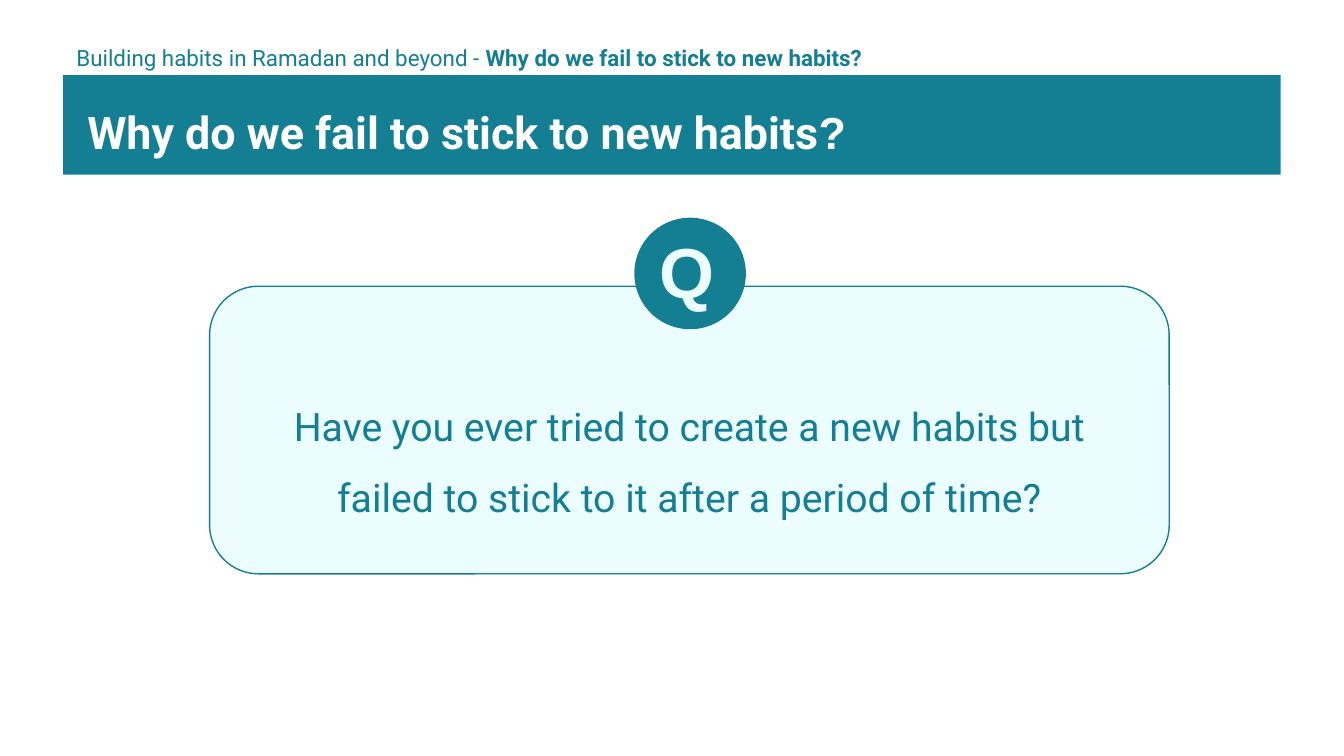
from pptx import Presentation
from pptx.dml.color import RGBColor
from pptx.enum.shapes import MSO_SHAPE
from pptx.enum.text import MSO_ANCHOR, PP_ALIGN
from pptx.util import Inches, Pt

COLORS = {"teal": "147E93", "pale": "EBFDFF", "white": "FFFFFF"}


def add_panel(kind, left, top, width, height, fill):
    shape = slide.shapes.add_shape(
        kind, Inches(left), Inches(top), Inches(width), Inches(height))
    shape.shadow.inherit = False
    shape.fill.solid()
    shape.fill.fore_color.rgb = RGBColor.from_string(COLORS[fill])
    shape.line.fill.background()
    return shape


def add_text(left, top, width, height, runs, size, color, line_spacing):
    """Add a one-paragraph text box; runs holds (text, font name, bold)."""
    box = slide.shapes.add_textbox(
        Inches(left), Inches(top), Inches(width), Inches(height))
    text_frame = box.text_frame
    text_frame.word_wrap = True
    text_frame.vertical_anchor = MSO_ANCHOR.TOP
    text_frame.margin_left = text_frame.margin_right = Inches(0.1)
    text_frame.margin_top = text_frame.margin_bottom = Inches(0.1)
    paragraph = text_frame.paragraphs[0]
    paragraph.line_spacing = line_spacing
    for text, font_name, bold in runs:
        run = paragraph.add_run()
        run.text = text
        run.font.name = font_name
        run.font.size = Pt(size)
        run.font.bold = bold
        run.font.color.rgb = RGBColor.from_string(COLORS[color])
    return text_frame


presentation = Presentation()
presentation.slide_width = Inches(10)
presentation.slide_height = Inches(10) * 9 // 16
slide = presentation.slides.add_slide(presentation.slide_layouts[6])

# Title band and breadcrumb
add_panel(MSO_SHAPE.RECTANGLE, 0.47, 0.56, 9.06, 0.74, "teal")
title = add_text(
    0.47, 0.62, 8.43, 0.62,
    [("Why do we fail to stick to new habits", "Roboto", True),
     ("?", "Arial", True)],
    24, "white", 1.15)
title.margin_left = Inches(0.18)
title.paragraphs[0].space_after = Pt(12)
add_text(
    0.47, 0.13, 7.04, 0.52,
    [("Building habits in Ramadan and beyond - ", "Roboto", False),
     ("Why do we fail to stick to new habits?", "Roboto", True)],
    12, "teal", 1.5)

# Question card with its badge
card = add_panel(MSO_SHAPE.ROUNDED_RECTANGLE, 1.56, 2.13, 7.14, 2.14, "pale")
card.adjustments[0] = 0.17
card.line.color.rgb = RGBColor.from_string(COLORS["teal"])
card.line.width = Pt(0.75)
add_panel(MSO_SHAPE.OVAL, 4.72, 1.62, 0.83, 0.83, "teal")
badge = add_text(4.81, 1.64, 0.67, 0.74, [("Q", "Arial", True)],
                 37.9, "pale", 0.95)
badge.paragraphs[0].space_after = Pt(12)
question = add_text(
    1.8, 2.72, 6.66, 0.52,
    [("Have you ever tried to create a new habits but failed to stick to it "
      "after a period of time?", "Roboto", False)],
    21, "teal", 1.5)
question.paragraphs[0].alignment = PP_ALIGN.CENTER

presentation.save("out.pptx")
